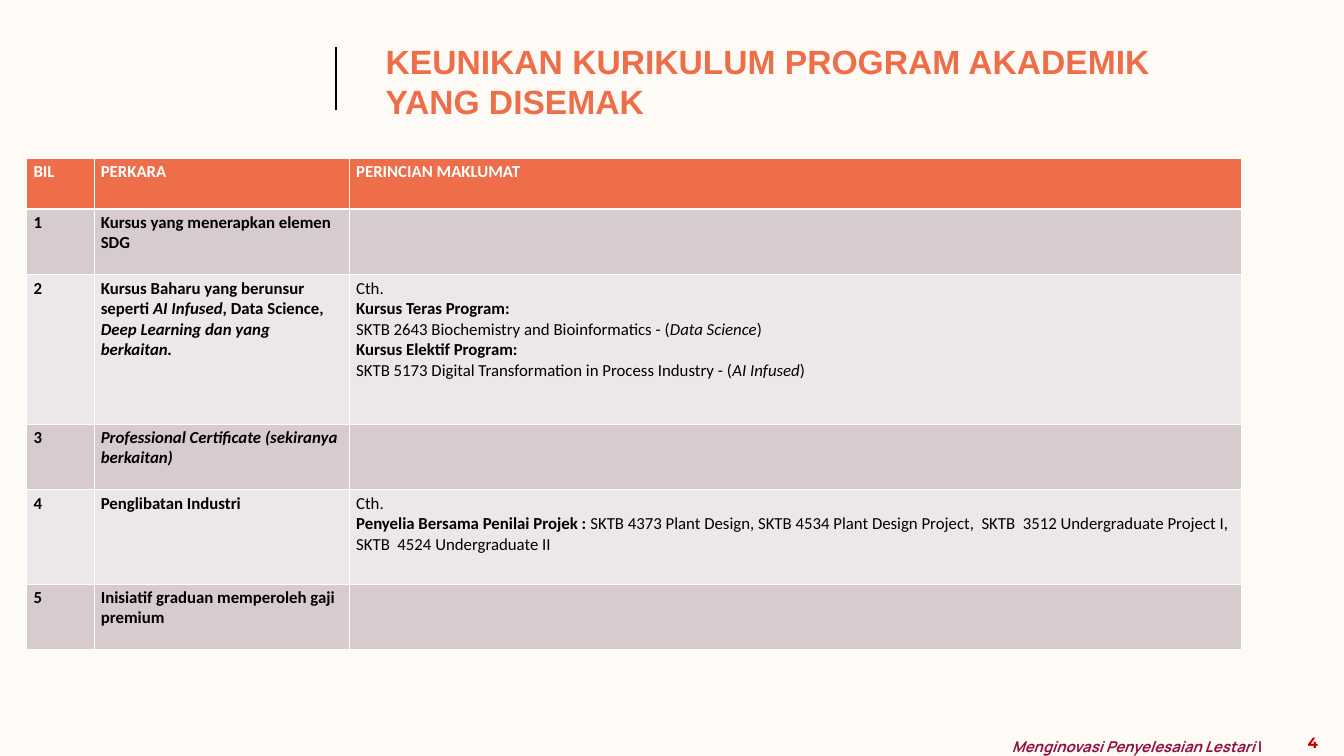
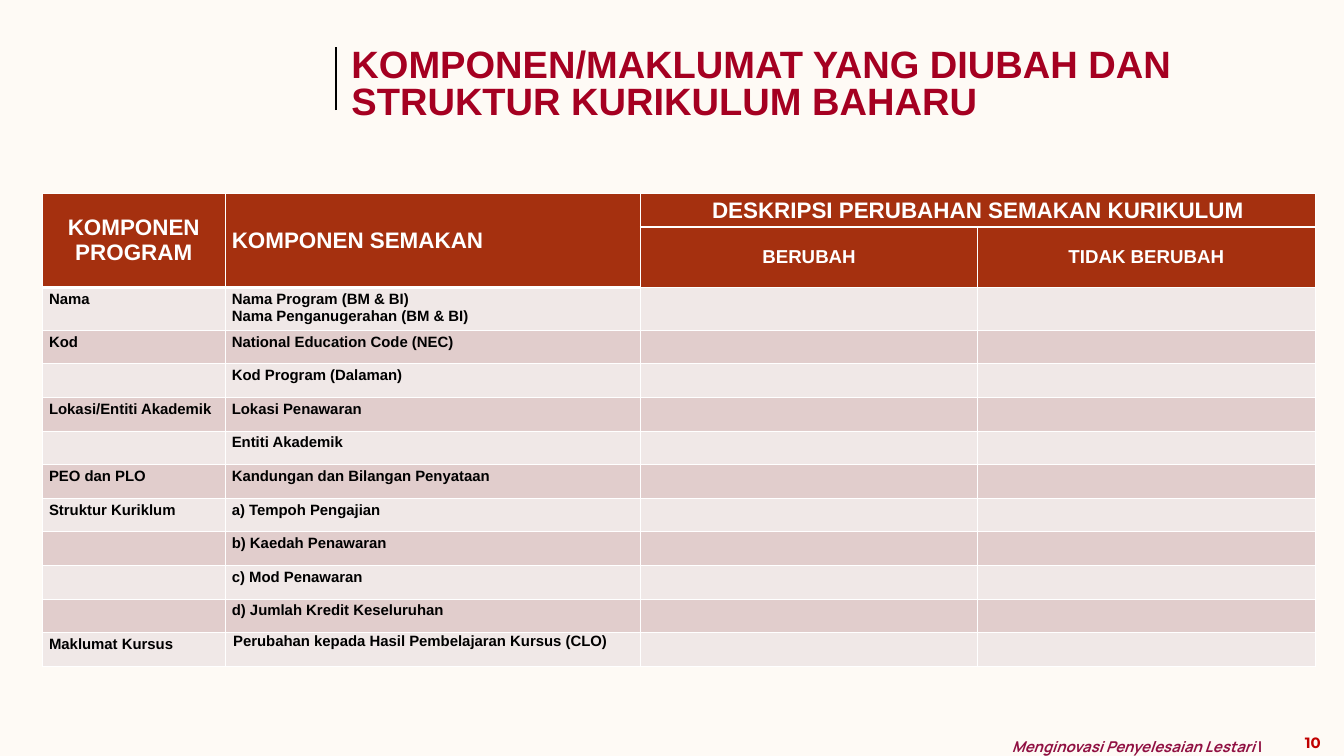
from lxml import etree
from pptx import Presentation
from pptx import util as u
from pptx.dml.color import RGBColor
from pptx.enum import shapes, text
from pptx.oxml import ns

Inches = u.Inches
CENTER = text.PP_ALIGN.CENTER
MIDDLE = text.MSO_ANCHOR.MIDDLE
TITLE_ONLY = 5

CREAM, BLACK, WHITE = "FEFAF5", "000000", "FFFFFF"
PLUM, RED, CRIMSON = "901042", "C00000", "A50021"
ORANGE, RUST = "EE6E4A", "A5300F"
MAUVE_BANDS = ("D8CBCD", "ECE7E8")
ROSE_BANDS = ("F0E8E7", "E1CDCC")

UNIQUENESS = [
    ["BIL", "PERKARA", "PERINCIAN MAKLUMAT"],
    ["1", "Kursus yang menerapkan elemen SDG", ""],
    ["2",
     [[("Kursus Baharu yang berunsur seperti ", "b"), ("AI Infused", "bi"),
       (", Data Science, ", "b"), ("Deep Learning dan yang berkaitan.", "bi")]],
     [[("Cth.", "")],
      [("Kursus Teras Program:", "b")],
      [("SKTB 2643 Biochemistry and Bioinformatics - (", ""),
       ("Data Science", "i"), (")", "")],
      [("Kursus Elektif Program:", "b")],
      [("SKTB 5173 Digital Transformation in Process Industry - (", ""),
       ("AI Infused", "i"), (")", "")]]],
    ["3", [[("Professional Certificate (sekiranya berkaitan)", "bi")]], ""],
    ["4", "Penglibatan Industri",
     [[("Cth.", "")],
      [("Penyelia Bersama Penilai Projek : ", "b"),
       ("SKTB 4373 Plant Design, SKTB 4534 Plant Design Project,  "
        "SKTB  3512 Undergraduate Project I, SKTB  4524 Undergraduate II", "")]]],
    ["5", "Inisiatif graduan memperoleh gaji premium", ""],
]

COMPONENTS = [
    ["KOMPONEN PROGRAM", "KOMPONEN SEMAKAN",
     "DESKRIPSI PERUBAHAN SEMAKAN KURIKULUM", ""],
    ["", "", "BERUBAH", "TIDAK BERUBAH"],
    ["Nama", [[("Nama Program (BM & BI)", "b")],
              [("Nama Penganugerahan (BM & BI)", "b")]], "", ""],
    ["Kod", "National Education Code (NEC)", "", ""],
    ["", "Kod Program (Dalaman)", "", ""],
    ["Lokasi/Entiti Akademik", "Lokasi Penawaran", "", ""],
    ["", "Entiti Akademik", "", ""],
    ["PEO dan PLO", "Kandungan dan Bilangan Penyataan", "", ""],
    ["Struktur Kuriklum", "a) Tempoh Pengajian", "", ""],
    ["", "b) Kaedah Penawaran", "", ""],
    ["", "c) Mod Penawaran", "", ""],
    ["", "d) Jumlah Kredit Keseluruhan", "", ""],
    ["Maklumat Kursus", "Perubahan kepada Hasil Pembelajaran Kursus (CLO)", "", ""],
]


def color(value):
    return RGBColor.from_string(value)


def paint(fill, value):
    fill.solid()
    fill.fore_color.rgb = color(value)


def style_span(span, name, size, ink, marks="b"):
    span.font.name = name
    span.font.size = u.Pt(size)
    span.font.color.rgb = color(ink)
    span.font.bold = "b" in marks
    span.font.italic = "i" in marks


def write_spans(para, spans, name, size, ink):
    for words, marks in spans:
        span = para.add_run()
        span.text = words
        style_span(span, name, size, ink, marks)


def add_box(page, left, top, width, height):
    box = page.shapes.add_textbox(
        Inches(left), Inches(top), Inches(width), Inches(height))
    box.text_frame.word_wrap = True
    return box.text_frame


def add_divider(page):
    line = page.shapes.add_connector(
        shapes.MSO_CONNECTOR.STRAIGHT, Inches(5), Inches(1.64), Inches(5), Inches(0.7))
    line.line.color.rgb = color(BLACK)
    line.line.width = u.Pt(3)
    etree.SubElement(line._element.spPr, ns.qn("a:effectLst"))


def add_footer(page, number):
    frame = add_box(page, 15.06, 10.87, 4.2, 0.38)
    frame.margin_left = frame.margin_right = frame.margin_top = frame.margin_bottom = 0
    motto = frame.paragraphs[0]
    motto.line_spacing = 1.4
    write_spans(motto, [("Menginovasi Penyelesaian Lestari ", "bi"), ("|", "b")],
                "Manrope", 16, PLUM)
    para = add_box(page, 19.07, 10.87, 0.93, 0.37).paragraphs[0]
    para.alignment = CENTER
    write_spans(para, [(str(number), "b")], "Montserrat", 16, RED)


def set_title(page, words, place, size, ink, spacing=1.0):
    title = page.shapes.title
    title.left, title.top, title.width, title.height = map(Inches, place)
    frame = title.text_frame
    frame.text = words
    frame.word_wrap = True
    frame.auto_size = text.MSO_AUTO_SIZE.NONE
    frame.vertical_anchor = text.MSO_ANCHOR.TOP
    para = frame.paragraphs[0]
    para.alignment = text.PP_ALIGN.LEFT
    para.line_spacing = spacing
    style_span(para.runs[0], "Arial", size, ink)


def add_page(deck, number, *title):
    page = deck.slides.add_slide(deck.slide_layouts[TITLE_ONLY])
    add_divider(page)
    add_footer(page, number)
    set_title(page, *title)
    return page


def set_borders(cell, top, bottom):
    props = cell._tc.get_or_add_tcPr()
    for side, points in (("L", 1), ("R", 1), ("T", top), ("B", bottom)):
        line = etree.SubElement(props, ns.qn(f"a:ln{side}"), w=str(u.Pt(points)))
        fill = etree.SubElement(line, ns.qn("a:solidFill"))
        etree.SubElement(fill, ns.qn("a:srgbClr"), val=WHITE)


def fill_cell(cell, content, name, size, ink):
    if not content:
        return
    paras = [[(content, "b")]] if isinstance(content, str) else content
    frame = cell.text_frame
    for index, spans in enumerate(paras):
        para = frame.add_paragraph() if index else frame.paragraphs[0]
        write_spans(para, spans, name, size, ink)


def add_grid(page, rows, left, top, widths, heights, name, sizes,
             header_fill, bands, heavy):
    header_count = len(sizes) - 1
    grid = page.shapes.add_table(
        len(rows), len(widths), Inches(left), Inches(top),
        Inches(sum(widths)), Inches(sum(heights))).table
    for column, width in zip(grid.columns, widths):
        column.width = Inches(width)
    for r, (row, height) in enumerate(zip(rows, heights)):
        grid.rows[r].height = Inches(height)
        is_header = r < header_count
        fill = header_fill if is_header else bands[(r - header_count) % 2]
        ink = WHITE if is_header else BLACK
        for c, content in enumerate(row):
            cell = grid.cell(r, c)
            set_borders(cell, 3 if (r - 1, c) in heavy else 1,
                        3 if (r, c) in heavy else 1)
            paint(cell.fill, fill)
            fill_cell(cell, content, name, sizes[min(r, header_count)], ink)
    return grid


def add_uniqueness_page(deck):
    page = add_page(deck, 4, "KEUNIKAN KURIKULUM PROGRAM AKADEMIK YANG DISEMAK",
                    (5.64, 0.56, 12.84, 1.31), 36, ORANGE)
    add_grid(page, UNIQUENESS, 0.4, 2.36, [1, 3.8, 13.28],
             [0.75, 0.98, 2.22, 0.98, 1.4, 0.98], "Calibri", [18, 18],
             ORANGE, MAUVE_BANDS, {(0, c) for c in range(3)})


def add_components_page(deck):
    page = add_page(deck, 10,
                    "KOMPONEN/MAKLUMAT YANG DIUBAH DAN STRUKTUR KURIKULUM BAHARU",
                    (5.13, 0.69, 12.78, 1.25), 40.8, CRIMSON, 0.8)
    grid = add_grid(page, COMPONENTS, 0.63, 2.88, [2.72, 6.18, 5.02, 5.02],
                    [0.5, 0.9, 0.63] + [0.5] * 10, "Arial", [24, 20, 16],
                    RUST, ROSE_BANDS, {(1, 0), (1, 1), (0, 0), (0, 1), (0, 2), (0, 3)})
    for c in (0, 1):
        grid.cell(0, c).merge(grid.cell(1, c))
    grid.cell(0, 2).merge(grid.cell(0, 3))
    for r, c in ((0, 0), (0, 1), (0, 2), (1, 2), (1, 3)):
        cell = grid.cell(r, c)
        cell.vertical_anchor = MIDDLE
        if c != 1:
            cell.text_frame.paragraphs[0].alignment = CENTER
    outcomes = grid.cell(len(COMPONENTS) - 1, 1)
    outcomes.margin_left = outcomes.margin_right = Inches(0.12)
    outcomes.margin_top = outcomes.margin_bottom = 0


def main():
    deck = Presentation()
    deck.slide_width, deck.slide_height = Inches(20), Inches(11.25)
    paint(deck.slide_master.background.fill, CREAM)
    add_uniqueness_page(deck)
    add_components_page(deck)
    deck.save("out.pptx")


if __name__ == "__main__":
    main()
